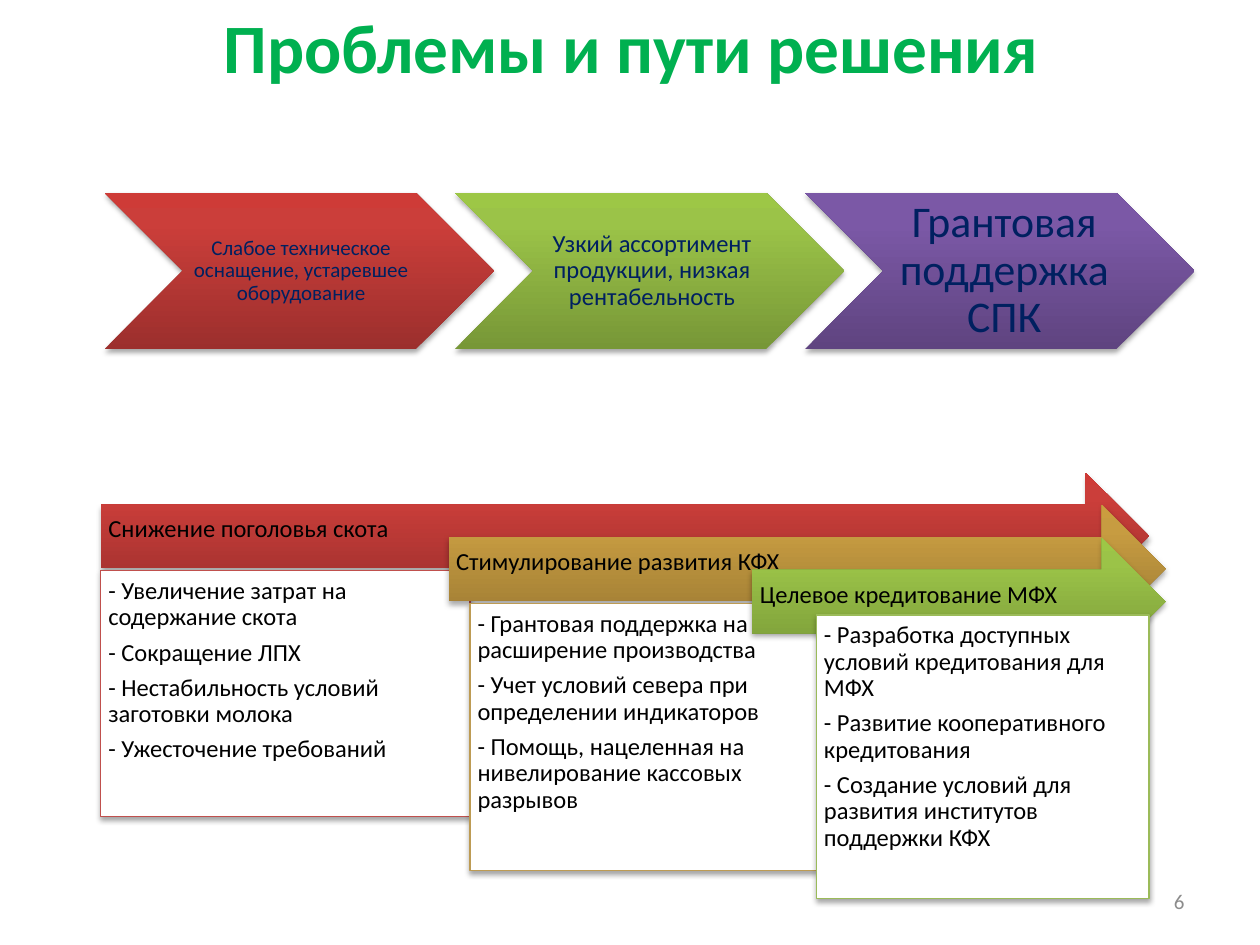
"""Builds the slide on problems and their solutions."""
from dataclasses import dataclass

from lxml.etree import SubElement
from pptx import Presentation
from pptx.dml.color import RGBColor
from pptx.enum.shapes import MSO_SHAPE
from pptx.enum.text import MSO_ANCHOR, PP_ALIGN
from pptx.oxml.ns import qn
from pptx.shapes.autoshape import Shape
from pptx.slide import Slide
from pptx.text.text import TextFrame
from pptx.util import Inches, Pt

COLS, ROWS = 100, 75
UNIT = Inches(10) // COLS
FONT = "Calibri"
NAVY, BLACK, WHITE = "002060", "000000", "FFFFFF"
STOPS = (0, 80, 100)
RED = ("9C2F2D", "CB3E3A", "CE3B37")
GREEN = ("779737", "9BC348", "9DC746")
VIOLET = ("5F4480", "7B58A6", "7C57A8")
GOLD = ("997832", "C79C41", "CB9D3F")
LEFT, MID, RIGHT = PP_ALIGN.LEFT, PP_ALIGN.CENTER, PP_ALIGN.RIGHT


@dataclass
class Box:
    """A place on the grid, in columns and rows."""
    col: float
    row: float
    wide: float
    high: float

    def span(self) -> list[int]:
        """Gives left, top, width and height as lengths."""
        return [round(n * UNIT) for n in (self.col, self.row, self.wide, self.high)]


@dataclass
class Style:
    """The look of a block of text."""
    size: float
    color: str
    align: PP_ALIGN = LEFT
    bold: bool = False
    line: float = 1.0
    after: float = 0.0


@dataclass
class Step:
    """One chevron in the upper row."""
    text: str
    size: float
    tint: tuple[str, ...]
    pads: tuple[float, ...]


@dataclass
class Track:
    """One arrow with the card below it."""
    head: str
    tint: tuple[str, ...]
    bar: Box
    edge: str
    card: Box
    items: tuple[str, ...]


STEPS = (
    Step("Слабое техническое оснащение, устаревшее оборудование", 12, RED,
         (0.5, 0.2, 0.2, 0.2)),
    Step("Узкий ассортимент продукции, низкая рентабельность", 14, GREEN,
         (0.6, 0.2, 0.2, 0.2)),
    Step("Грантовая поддержка СПК", 25, VIOLET, (1.1, 0.4, 0.4, 0.4)),
)
TRACKS = (
    Track("Снижение поголовья скота", RED, Box(8, 37.5, 83.2, 10.1),
          "C0504D", Box(8, 45.3, 29.3, 19.5),
          ("- Увеличение затрат на содержание скота",
           "- Сокращение ЛПХ",
           "- Нестабильность условий заготовки молока",
           "- Ужесточение требований")),
    Track("Стимулирование развития КФХ", GOLD, Box(35.6, 40.1, 56.9, 10.1),
          "BD9B53", Box(37.3, 47.9, 27.5, 21.2),
          ("- Грантовая поддержка на расширение производства",
           "- Учет условий севера при определении индикаторов",
           "- Помощь, нацеленная на нивелирование кассовых разрывов")),
    Track("Целевое кредитование МФХ", GREEN, Box(59.7, 42.7, 32.8, 10.1),
          "9BBB59", Box(64.8, 48.8, 26.4, 22.5),
          ("- Разработка доступных условий кредитования для МФХ",
           "- Развитие кооперативного кредитования",
           "- Создание условий для развития институтов поддержки КФХ")),
)


def paint(code: str) -> RGBColor:
    """Turns a hex string into a colour."""
    return RGBColor.from_string(code)


def write(frame: TextFrame, lines: tuple[str, ...], style: Style,
          pads: tuple[float, ...], anchor: MSO_ANCHOR = MSO_ANCHOR.MIDDLE) -> None:
    """Fills a frame with one paragraph per line."""
    frame.word_wrap = True
    frame.vertical_anchor = anchor
    (frame.margin_left, frame.margin_top,
     frame.margin_right, frame.margin_bottom) = [round(n * UNIT) for n in pads]
    for i, line in enumerate(lines):
        para = frame.add_paragraph() if i else frame.paragraphs[0]
        para.alignment = style.align
        para.line_spacing = style.line
        para.space_after = Pt(style.size * style.after)
        run = para.add_run()
        run.text = line
        run.font.name = FONT
        run.font.size = Pt(style.size)
        run.font.bold = style.bold
        run.font.color.rgb = paint(style.color)


def label(slide: Slide, box: Box, text: str, style: Style) -> None:
    """Adds a plain line of text."""
    frame = slide.shapes.add_textbox(*box.span()).text_frame
    write(frame, (text,), style, (1, 0.5, 1, 0.5))


def block(slide: Slide, kind: MSO_SHAPE, box: Box) -> Shape:
    """Adds a shape with a soft shadow and no line."""
    shape = slide.shapes.add_shape(kind, *box.span())
    shape.line.fill.background()
    shape.shadow.inherit = False
    glow = SubElement(shape._element.spPr.find(qn("a:effectLst")), qn("a:outerShdw"),
                      blurRad=str(Pt(3.1)), dist=str(Pt(1.8)),
                      dir="5400000", rotWithShape="0")
    tone = SubElement(glow, qn("a:srgbClr"), val=BLACK)
    SubElement(tone, qn("a:alpha"), val="35000")
    return shape


def shade(shape: Shape, tint: tuple[str, ...]) -> None:
    """Fills a shape with a gradient that rises from its foot."""
    shape.fill.gradient()
    shape.fill.gradient_angle = 90
    stops = shape._element.spPr.find(qn("a:gradFill")).find(qn("a:gsLst"))
    for old in list(stops):
        stops.remove(old)
    for share, code in zip(STOPS, tint):
        stop = SubElement(stops, qn("a:gs"), pos=str(share * 1000))
        SubElement(stop, qn("a:srgbClr"), val=code)


def chevron(slide: Slide, rank: int, step: Step) -> None:
    """Draws one step of the upper row."""
    shape = block(slide, MSO_SHAPE.CHEVRON, Box(8.3 + 27.8 * rank, 15.3, 30.9, 12.4))
    shade(shape, step.tint)
    style = Style(step.size, NAVY, MID, line=0.9, after=0.35)
    write(shape.text_frame, (step.text,), style, step.pads)


def track(slide: Slide, item: Track) -> None:
    """Draws one arrow and its card."""
    style = Style(14, BLACK, line=0.9, after=0.35)
    bar = block(slide, MSO_SHAPE.RIGHT_ARROW, item.bar)
    shade(bar, item.tint)
    write(bar.text_frame, (item.head,), style, (0.6, 0.6, 2.8, 1.6))
    card = block(slide, MSO_SHAPE.RECTANGLE, item.card)
    card.fill.solid()
    card.fill.fore_color.rgb = paint(WHITE)
    card.line.color.rgb = paint(item.edge)
    card.line.width = Pt(0.75)
    write(card.text_frame, item.items, style, (0.6,) * 4, MSO_ANCHOR.TOP)


def main() -> None:
    """Builds and saves the slide."""
    deck = Presentation()
    deck.slide_width, deck.slide_height = COLS * UNIT, ROWS * UNIT
    slide = deck.slides.add_slide(deck.slide_layouts[6])
    label(slide, Box(5.1, 1.3, 90, 4.7), "Проблемы и пути решения",
          Style(39.6, "00B050", MID, bold=True))
    for rank, step in enumerate(STEPS):
        chevron(slide, rank, step)
    for item in TRACKS:
        track(slide, item)
    label(slide, Box(71.7, 69.5, 23.3, 4), "6", Style(12, "8C8C8C", RIGHT))
    deck.save("out.pptx")


if __name__ == "__main__":
    main()
